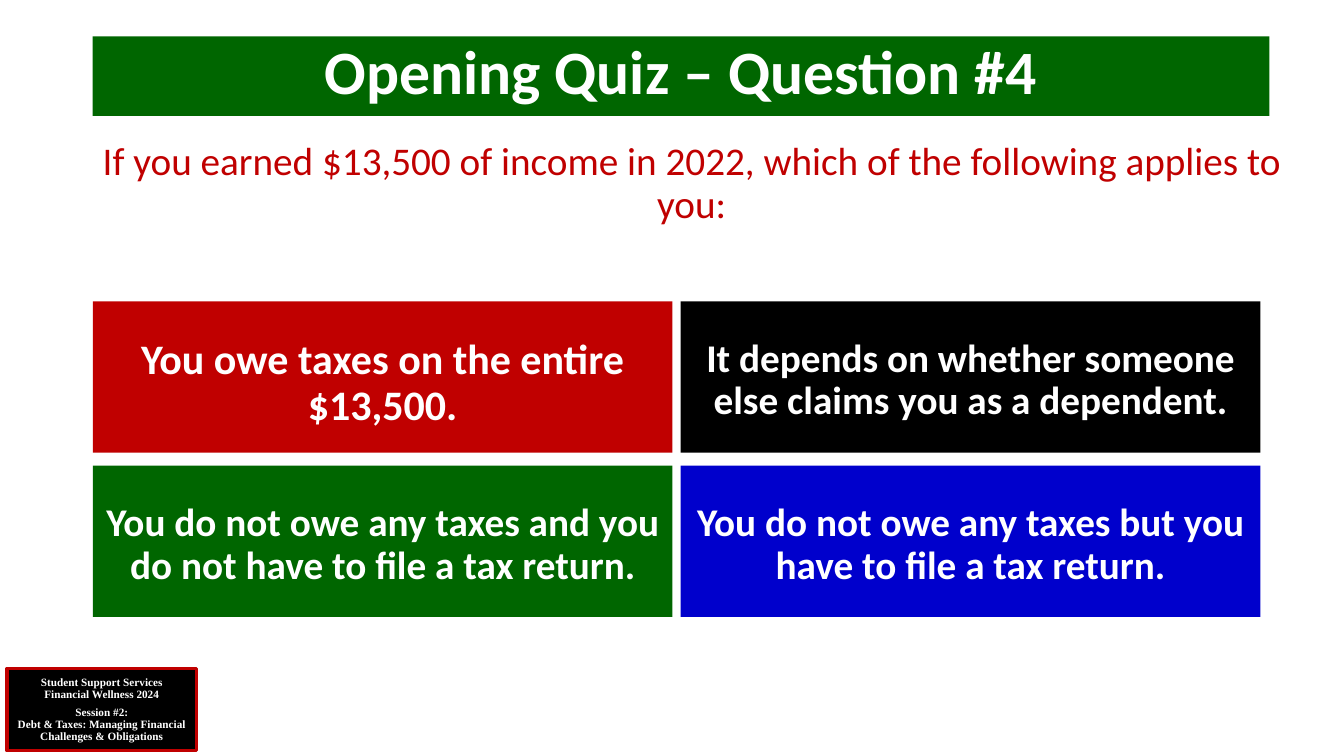
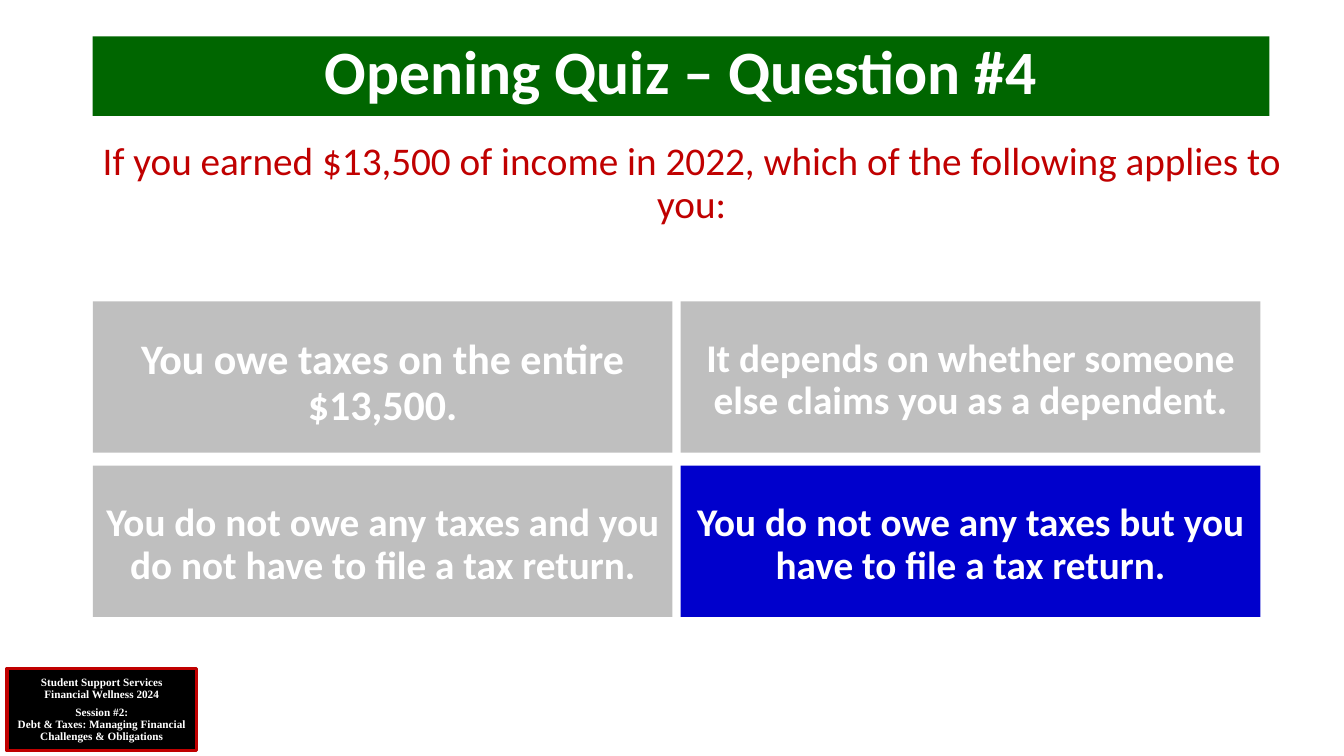
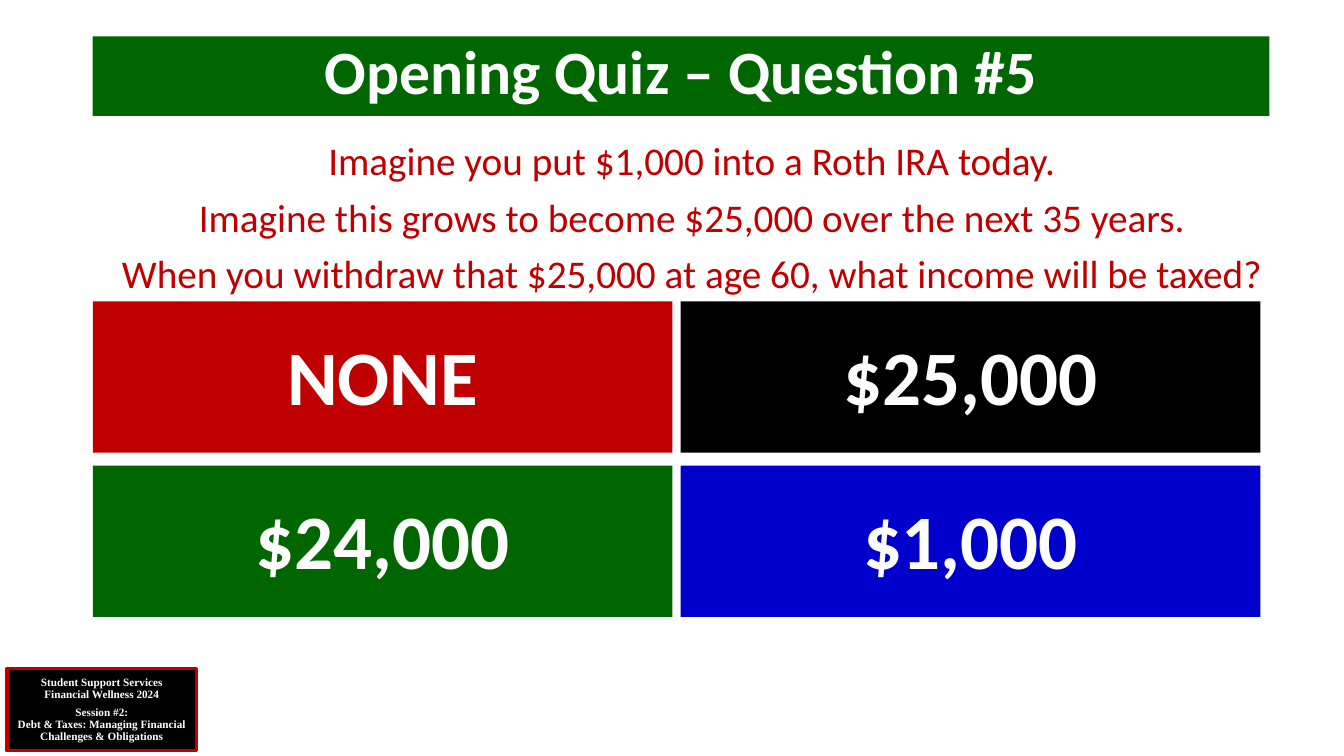
from pptx import Presentation
from pptx.dml.color import RGBColor
from pptx.enum import shapes, text
from pptx.util import Inches, Pt

HUES = {"red": "C00000", "black": "000000", "green": "006600",
        "blue": "0000CC", "grey": "BFBFBF", "white": "FFFFFF"}
BODY = {"name": "Calibri", "size": 28, "bold": False, "hue": "red"}
HEAD = {**BODY, "size": 44, "bold": True, "hue": "white"}
REPLY = {**HEAD, "size": 28}
NOTE = {**HEAD, "name": "Times New Roman", "size": 8}

SIZE = (13.33, 7.5)
TITLE = (0.92, 0.36, 11.67, 0.79)
ASK = (0.92, 1.36, 11.88, 5.4)
GRID = (0.92, 2.99, 11.58, 3.13)
BADGE = (0.07, 6.63, 1.88, 0.82)
GAP = (0.08, 0.13)
KEYS = ("red", "black", "green", "blue")

SESSION = (
    "Student Support Services",
    "Financial Wellness 2024",
    "Session #2:\nDebt & Taxes: Managing Financial Challenges & Obligations",
)
TAX = {
    "title": "Opening Quiz – Question #4",
    "ask": ("If you earned $13,500 of income in 2022, which of the following "
            "applies to you:",),
    "replies": (
        "You owe taxes on the entire $13,500.",
        "It depends on whether someone else claims you as a dependent.",
        "You do not owe any taxes and you do not have to file a tax return.",
        "You do not owe any taxes but you have to file a tax return.",
    ),
    "sizes": (30, 28, 28, 28),
    "hues": KEYS,
}
ROTH = {
    "title": "Opening Quiz – Question #5",
    "ask": ("Imagine you put $1,000 into a Roth IRA today.",
            "Imagine this grows to become $25,000 over the next 35 years.",
            "When you withdraw that $25,000 at age 60, what income will be taxed?"),
    "replies": ("NONE", "$25,000", "$24,000", "$1,000"),
    "sizes": (55,) * 4,
    "hues": KEYS,
}
QUIZ = (TAX, {**TAX, "hues": ("grey",) * 3 + ("blue",)}, ROTH)


def tint(hue):
    """Return the colour of a named hue."""
    return RGBColor.from_string(HUES[hue])


def write(shape, lines, style, gaps=None, **frame):
    """Fill a shape with centred paragraphs in one style."""
    body = shape.text_frame
    for key, value in {"word_wrap": True, "vertical_anchor": text.MSO_ANCHOR.TOP,
                       **frame}.items():
        setattr(body, key, value)
    for spot, line in enumerate(lines):
        para = body.add_paragraph() if spot else body.paragraphs[0]
        para.text = line
        para.alignment = text.PP_ALIGN.CENTER
        para.line_spacing = 0.9
        if spot and gaps:
            para.space_before = Pt(gaps[spot])
        for run in para.runs:
            for key in ("name", "bold"):
                setattr(run.font, key, style[key])
            run.font.size = Pt(style["size"])
            run.font.color.rgb = tint(style["hue"])


def block(slide, box, hue, edge=None):
    """Draw a plain filled rectangle."""
    shape = slide.shapes.add_shape(shapes.MSO_SHAPE.RECTANGLE, *map(Inches, box))
    shape.shadow.inherit = False
    shape.fill.solid()
    shape.fill.fore_color.rgb = tint(hue)
    if edge:
        shape.line.color.rgb = tint(edge)
        shape.line.width = Pt(2.25)
    else:
        shape.line.fill.background()
    return shape


def badge(slide, box):
    """Place the session label."""
    inset = Inches(0.08)
    write(block(slide, box, "black", "red"), SESSION, NOTE, (0, 0, 4.4),
          vertical_anchor=text.MSO_ANCHOR.MIDDLE,
          margin_left=inset, margin_right=inset)


def ask(slide, box, lines):
    """Place the question text."""
    write(slide.shapes.add_textbox(*map(Inches, box)), lines, BODY,
          (10,) * len(lines))


def grid(slide, box, quiz):
    """Place the four replies in two columns and two rows."""
    left, top, wide, high = box
    wide, high = (wide - GAP[0]) / 2, (high - GAP[1]) / 2
    cells = zip(quiz["replies"], quiz["sizes"], quiz["hues"])
    for spot, (reply, size, hue) in enumerate(cells):
        row, col = divmod(spot, 2)
        cell = (left + col * (wide + GAP[0]), top + row * (high + GAP[1]),
                wide, high)
        write(block(slide, cell, hue), (reply,), {**REPLY, "size": size},
              margin_top=Inches(0.37))


def page(deck, quiz):
    """Build one quiz slide."""
    slide = deck.slides.add_slide(deck.slide_layouts[6])
    badge(slide, BADGE)
    write(block(slide, TITLE, "green"), (quiz["title"],), HEAD)
    ask(slide, ASK, quiz["ask"])
    grid(slide, GRID, quiz)


def main():
    """Build and save the deck."""
    deck = Presentation()
    deck.slide_width, deck.slide_height = map(Inches, SIZE)
    for quiz in QUIZ:
        page(deck, quiz)
    deck.save("out.pptx")


if __name__ == "__main__":
    main()
